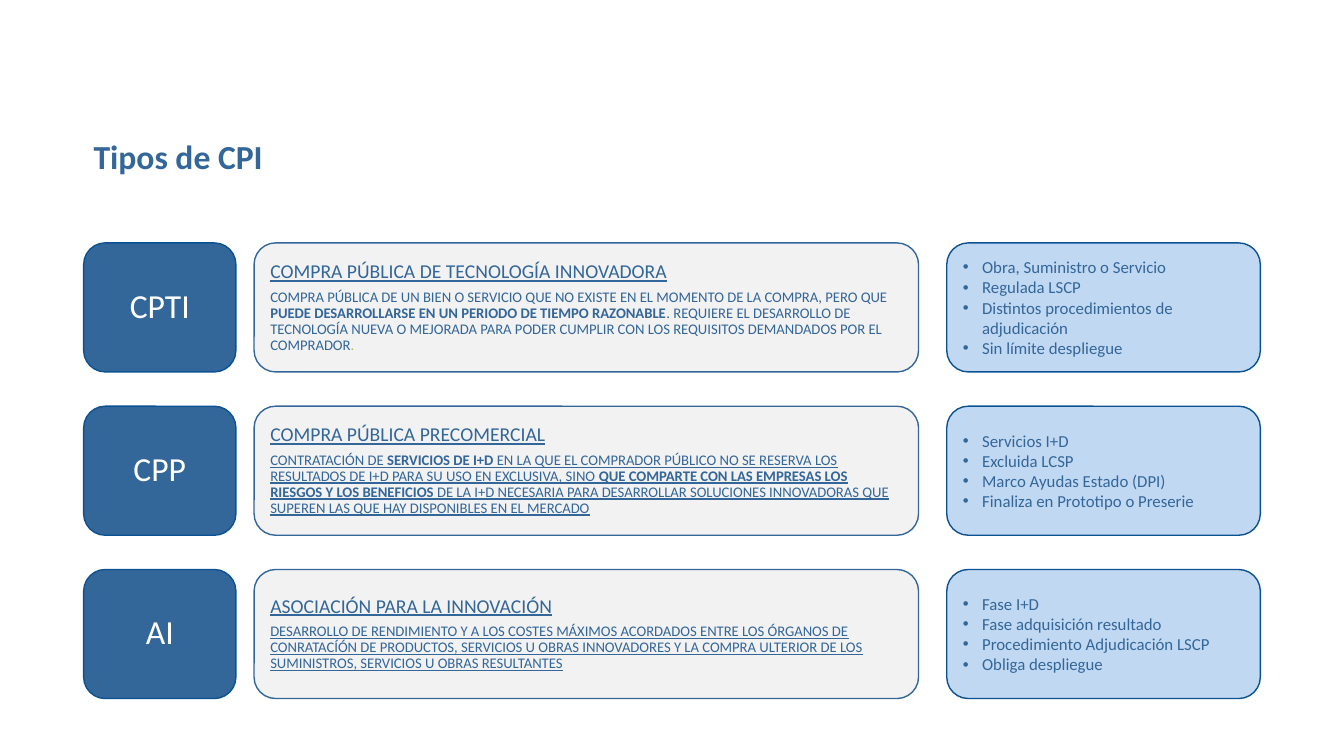
from lxml import etree
from pptx import Presentation
from pptx import util as u
from pptx.dml.color import RGBColor
from pptx.enum import shapes, text
from pptx.oxml import ns

NAVY = RGBColor(0x33, 0x66, 0x99)
EDGE = RGBColor(0x0B, 0x52, 0x92)
GREY = RGBColor(0xF2, 0xF2, 0xF2)
SKY = RGBColor(0xC1, 0xD8, 0xF2)
GREEN = RGBColor(0xA5, 0xC2, 0x49)
WHITE = RGBColor(0xFF, 0xFF, 0xFF)

# Grid in inches: (left, width) of each column, then the row rule
CODE_COLUMN = (0.83, 1.51)
DEFINITION_COLUMN = (2.52, 6.59)
FEATURE_COLUMN = (9.39, 3.11)
FIRST_ROW, ROW_PITCH, ROW_HEIGHT = 2.41, 1.62, 1.28

BOLD = {"bold": True}

# code, heading, underlined definition, spans of the definition, features
PURCHASE_TYPES = [
    ("CPTI", "COMPRA PÚBLICA DE TECNOLOGÍA INNOVADORA", False,
     [("COMPRA PÚBLICA DE UN BIEN O SERVICIO QUE NO EXISTE EN EL MOMENTO DE LA COMPRA, PERO QUE ", {}),
      ("PUEDE DESARROLLARSE EN UN PERIODO DE TIEMPO RAZONABLE", BOLD),
      (". REQUIERE EL DESARROLLO DE TECNOLOGÍA NUEVA O MEJORADA PARA PODER CUMPLIR CON "
       "LOS REQUISITOS DEMANDADOS POR EL COMPRADOR", {}),
      (".", {"color": GREEN})],
     ["Obra, Suministro o Servicio", "Regulada LSCP",
      "Distintos procedimientos de adjudicación", "Sin límite despliegue"]),
    ("CPP", "COMPRA PÚBLICA PRECOMERCIAL", True,
     [("CONTRATACIÓN DE ", {}),
      ("SERVICIOS DE I+D ", BOLD),
      ("EN LA QUE EL COMPRADOR PÚBLICO NO SE RESERVA LOS RESULTADOS DE I+D PARA SU USO "
       "EN EXCLUSIVA, SINO ", {}),
      ("QUE COMPARTE CON LAS EMPRESAS LOS RIESGOS Y LOS BENEFICIOS ", BOLD),
      ("DE LA I+D NECESARIA PARA DESARROLLAR SOLUCIONES INNOVADORAS QUE SUPEREN LAS QUE "
       "HAY DISPONIBLES EN EL MERCADO", {})],
     ["Servicios I+D", "Excluida LCSP", "Marco Ayudas Estado (DPI)",
      "Finaliza en Prototipo o Preserie"]),
    ("AI", "ASOCIACIÓN PARA LA INNOVACIÓN", True,
     [("DESARROLLO DE RENDIMIENTO Y A LOS COSTES MÁXIMOS ACORDADOS ENTRE LOS ÓRGANOS DE "
       "CONRATACÍÓN DE PRODUCTOS, SERVICIOS U OBRAS INNOVADORES Y LA COMPRA ULTERIOR DE "
       "LOS SUMINISTROS, SERVICIOS U OBRAS RESULTANTES", {})],
     ["Fase I+D", "Fase adquisición resultado", "Procedimiento Adjudicación LSCP",
      "Obliga despliegue"]),
]


def add_span(para, words, size=12, color=NAVY, bold=False, underline=False):
    span = para.add_run()
    span.text = words
    font = span.font
    font.name, font.size = "Calibri", u.Pt(size)
    font.bold, font.underline = bold, underline
    font.color.rgb = color


def add_para(frame, align=text.PP_ALIGN.LEFT, line=0.9, after=5):
    """Return the frame's first paragraph if still empty, else a new one."""
    first = frame.paragraphs[0]
    para = frame.add_paragraph() if first.runs else first
    para.alignment, para.line_spacing = align, line
    para.space_after = u.Pt(after)
    return para


def add_bullet(para):
    props = para._p.get_or_add_pPr()
    indent = u.Inches(0.19)
    props.set("marL", str(indent))
    props.set("indent", str(-indent))
    etree.SubElement(props, ns.qn("a:buFont")).set("typeface", "Arial")
    etree.SubElement(props, ns.qn("a:buChar")).set("char", "•")


def add_card(page, column, row, fill, edge):
    """Draw a rounded card in a grid cell and return its text frame."""
    left, width = column
    top = FIRST_ROW + row * ROW_PITCH
    card = page.shapes.add_shape(
        shapes.MSO_SHAPE.ROUNDED_RECTANGLE,
        *(u.Inches(length) for length in (left, top, width, ROW_HEIGHT)))
    card.shadow.inherit = False
    card.fill.solid()
    card.fill.fore_color.rgb = fill
    card.line.color.rgb = edge
    card.line.width = u.Pt(1)
    frame = card.text_frame
    frame.word_wrap = True
    frame.vertical_anchor = text.MSO_ANCHOR.MIDDLE
    return frame


def add_title(page, words):
    box = page.shapes.add_textbox(
        *(u.Inches(length) for length in (0.83, 1.34, 11.67, 0.58)))
    box.text_frame.word_wrap = True
    add_span(add_para(box.text_frame, after=0), words, size=24, bold=True)


def add_code(page, row, code):
    frame = add_card(page, CODE_COLUMN, row, NAVY, EDGE)
    add_span(add_para(frame, align=text.PP_ALIGN.CENTER), code, size=24, color=WHITE)


def add_definition(page, row, heading, underline, spans):
    frame = add_card(page, DEFINITION_COLUMN, row, GREY, NAVY)
    add_span(add_para(frame), heading, size=14, underline=True)
    para = add_para(frame, after=5 if underline else 4)
    for words, style in spans:
        add_span(para, words, size=10.5, underline=underline, **style)


def add_features(page, row, features):
    frame = add_card(page, FEATURE_COLUMN, row, SKY, EDGE)
    for feature in features:
        para = add_para(frame, line=1.0, after=0)
        add_bullet(para)
        add_span(para, feature)


def main():
    deck = Presentation()
    deck.slide_width, deck.slide_height = u.Inches(13.33), u.Inches(7.5)
    page = deck.slides.add_slide(deck.slide_layouts[6])
    add_title(page, "Tipos de CPI")
    for row, (code, heading, underline, spans, features) in enumerate(PURCHASE_TYPES):
        add_code(page, row, code)
        add_definition(page, row, heading, underline, spans)
        add_features(page, row, features)
    deck.save("out.pptx")


if __name__ == "__main__":
    main()
